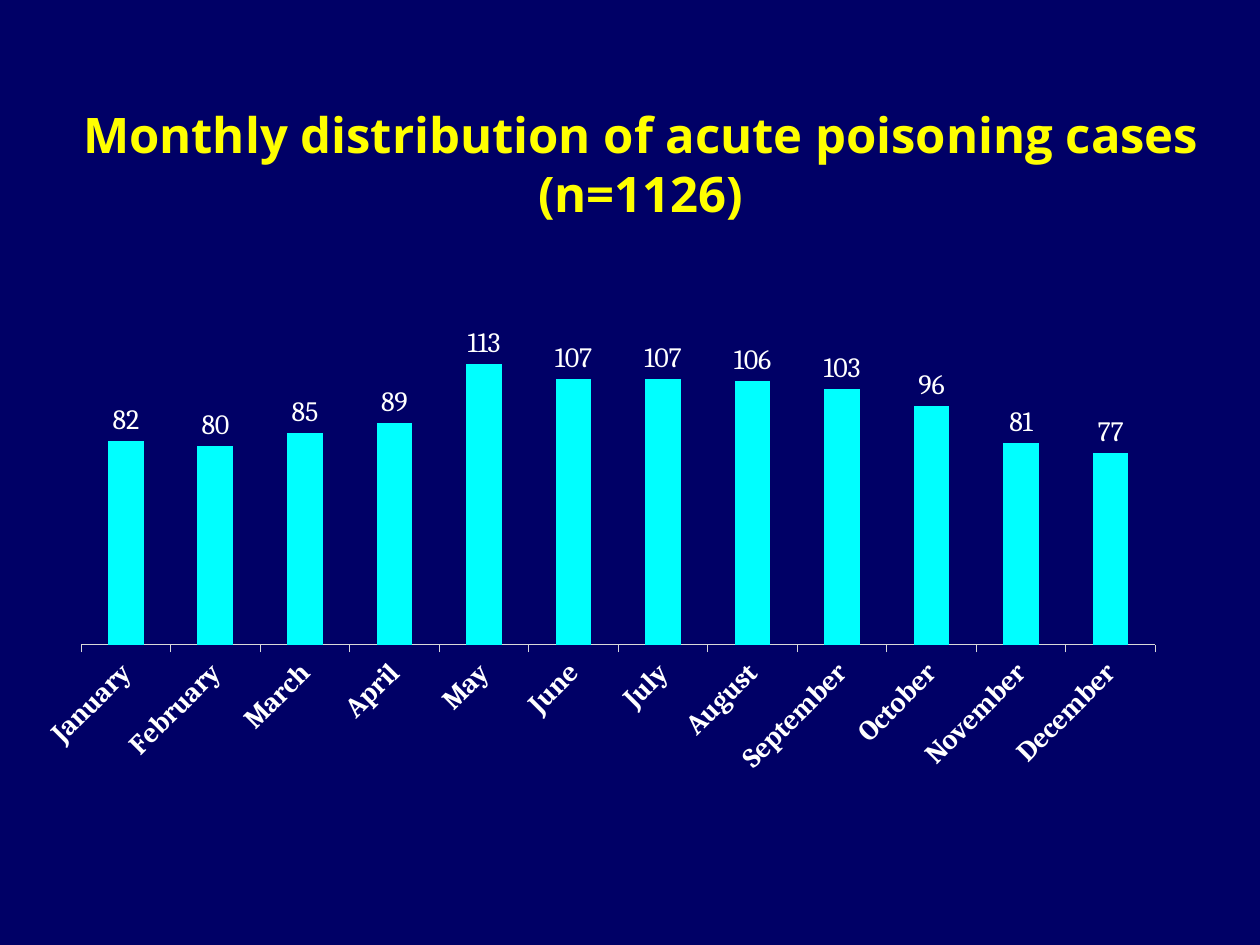
from lxml import etree
from pptx import Presentation
from pptx.chart.data import CategoryChartData
from pptx.dml.color import RGBColor
from pptx.enum.chart import XL_CHART_TYPE, XL_LABEL_POSITION, XL_TICK_MARK
from pptx.enum.text import MSO_ANCHOR, PP_ALIGN
from pptx.oxml.ns import qn
from pptx.util import Emu, Pt

NAVY = RGBColor(0x00, 0x00, 0x66)
YELLOW = RGBColor(0xFF, 0xFF, 0x00)
CYAN = RGBColor(0x00, 0xFF, 0xFF)
WHITE = RGBColor(0xFF, 0xFF, 0xFF)
SILVER = RGBColor(0xD9, 0xD9, 0xD9)
COLUMN = XL_CHART_TYPE.COLUMN_CLUSTERED
OUTSIDE_END = XL_LABEL_POSITION.OUTSIDE_END
TICK_OUT = XL_TICK_MARK.OUTSIDE
MIDDLE = MSO_ANCHOR.MIDDLE
CENTER = PP_ALIGN.CENTER

MONTHLY_CASES = {
    "January": 82, "February": 80, "March": 85, "April": 89,
    "May": 113, "June": 107, "July": 107, "August": 106,
    "September": 103, "October": 96, "November": 81, "December": 77,
}


def px(n):
    return Emu(round(n * 914400 / 126))


def add_text(s, text, x, y, w, h, font, size, color, bold=False, align=CENTER):
    tb = s.shapes.add_textbox(px(x), px(y), px(w), px(h))
    tf = tb.text_frame
    tf.word_wrap = True
    tf.vertical_anchor = MIDDLE
    p = tf.paragraphs[0]
    p.alignment = align
    r = p.add_run()
    r.text = text
    r.font.name = font
    r.font.size = Pt(size)
    r.font.bold = bold
    r.font.color.rgb = color
    return tb


prs = Presentation()
prs.slide_width = px(1260)
prs.slide_height = px(945)
s = prs.slides.add_slide(prs.slide_layouts[6])
s.background.fill.solid()
s.background.fill.fore_color.rgb = NAVY

add_text(s, "Monthly distribution of acute poisoning cases (n=1126)", 21, 84, 1239, 158,
         font="Open Sans", size=28, color=YELLOW, bold=True)

data = CategoryChartData(number_format="0")
data.categories = list(MONTHLY_CASES)
data.add_series("Series 1", list(MONTHLY_CASES.values()))
chart = s.shapes.add_chart(COLUMN, px(42), px(273), px(1187), px(536), data).chart
chart.has_legend = False
chart.has_title = False
chart.font.name = "Cambria"
chart.font.size = Pt(18)
chart.font.color.rgb = WHITE

plot = chart.plots[0]
plot.gap_width = 150
plot.vary_by_categories = False
fill = plot.series[0].format.fill
fill.solid()
fill.fore_color.rgb = CYAN

plot.has_data_labels = True
labels = plot.data_labels
labels.show_value = True
labels.number_format = "0"
labels.number_format_is_linked = False
labels.position = OUTSIDE_END
labels.font.name = "Cambria"
labels.font.size = Pt(16)
labels.font.color.rgb = WHITE

value_axis = chart.value_axis
value_axis.minimum_scale = 0
value_axis.maximum_scale = 120
value_axis.has_major_gridlines = False
value_axis.visible = False

month_axis = chart.category_axis
month_axis.major_tick_mark = TICK_OUT
month_axis.format.line.color.rgb = SILVER
month_axis.format.line.width = Pt(0.75)
font = month_axis.tick_labels.font
font.name = "Cambria"
font.size = Pt(16)
font.bold = True
font.color.rgb = WHITE
body = month_axis._element.find(qn("c:txPr")).find(qn("a:bodyPr"))
body.set("rot", "-2700000")
body.set("vert", "horz")

plot_area = chart._chartSpace.find(".//" + qn("c:plotArea"))
for old in plot_area.findall(qn("c:layout")):
    plot_area.remove(old)
layout = etree.Element(qn("c:layout"))
plot_area.insert(0, layout)
manual = etree.SubElement(layout, qn("c:manualLayout"))
for tag, val in (("layoutTarget", "inner"), ("xMode", "edge"), ("yMode", "edge"),
                 ("x", "0.033"), ("y", "0.137"), ("w", "0.905"), ("h", "0.557")):
    etree.SubElement(manual, qn("c:" + tag)).set("val", val)

prs.save("out.pptx")
